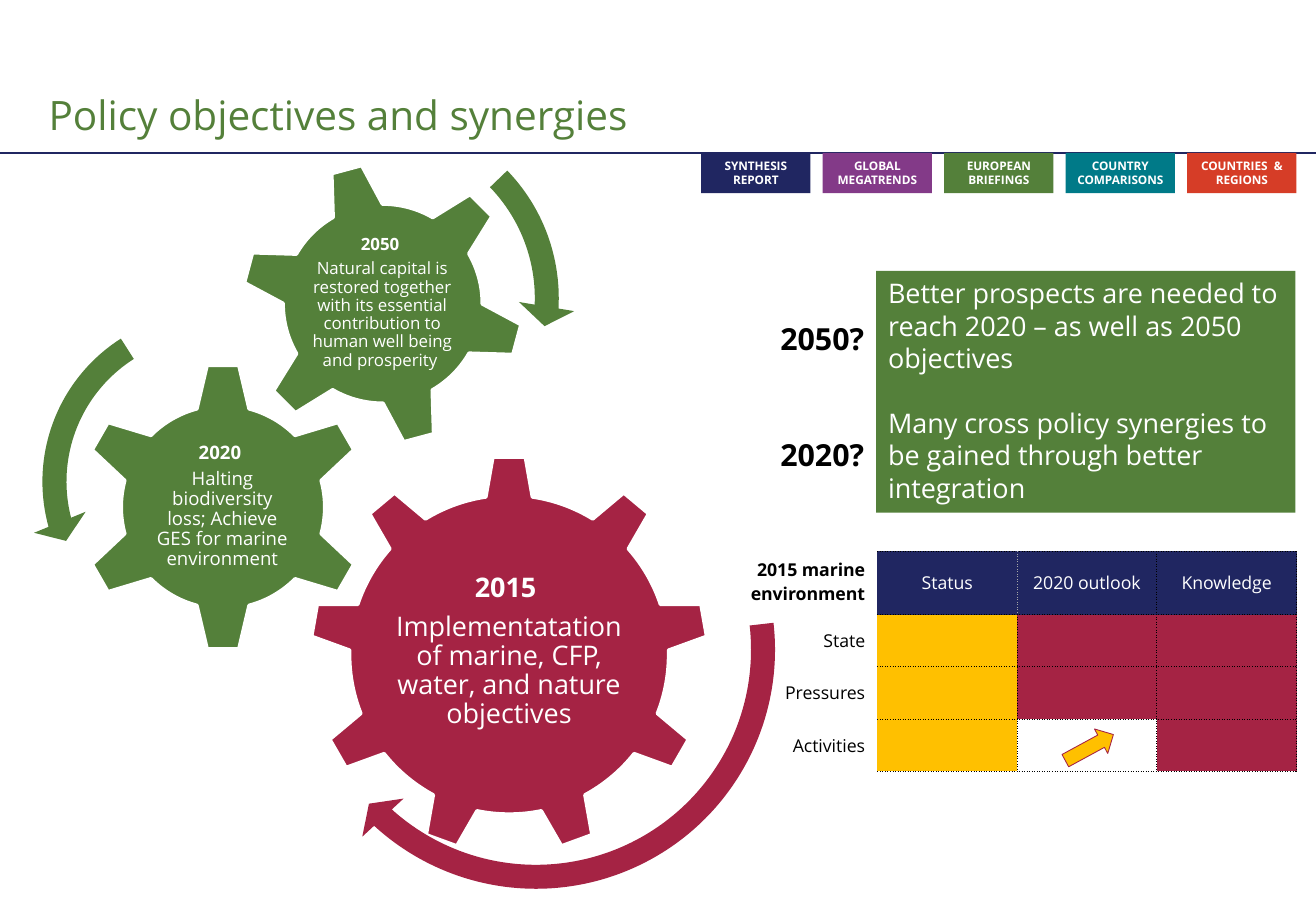
from dataclasses import dataclass

from lxml import etree
from pptx import Presentation
from pptx.dml.color import RGBColor
from pptx.enum.shapes import MSO_CONNECTOR, MSO_SHAPE
from pptx.enum.text import MSO_ANCHOR, PP_ALIGN
from pptx.oxml.ns import qn
from pptx.util import Inches, Pt

LEFT, CENTER, RIGHT = PP_ALIGN.LEFT, PP_ALIGN.CENTER, PP_ALIGN.RIGHT
TOP, MIDDLE, BOTTOM = MSO_ANCHOR.TOP, MSO_ANCHOR.MIDDLE, MSO_ANCHOR.BOTTOM
RECTANGLE, BLOCK_ARROW = MSO_SHAPE.RECTANGLE, MSO_SHAPE.RIGHT_ARROW
GEAR_6, GEAR_9 = MSO_SHAPE.GEAR_6, MSO_SHAPE.GEAR_9
CLOCKWISE, COUNTERCLOCKWISE = MSO_SHAPE.CIRCULAR_ARROW, MSO_SHAPE.LEFT_CIRCULAR_ARROW
STRAIGHT = MSO_CONNECTOR.STRAIGHT


@dataclass(frozen=True)
class Theme:
    font: str = "Open Sans"
    navy: str = "202661"
    purple: str = "833A88"
    green: str = "54803A"
    teal: str = "007A88"
    orange: str = "D63D27"
    crimson: str = "A52344"
    amber: str = "FFC000"
    grey: str = "A6A6A6"
    white: str = "FFFFFF"
    black: str = "000000"
    title_size: float = 24
    label_size: float = 18
    panel_size: float = 16
    table_size: float = 10.5
    tab_size: float = 7


THEME = Theme()

TABS = [
    ("SYNTHESIS\nREPORT", THEME.navy),
    ("GLOBAL\nMEGATRENDS", THEME.purple),
    ("EUROPEAN\nBRIEFINGS", THEME.green),
    ("COUNTRY COMPARISONS", THEME.teal),
    ("COUNTRIES  & REGIONS", THEME.orange),
]

GEARS = [
    (GEAR_9, (2.55, 3.75, 3.28, 3.28), 0, THEME.crimson, (3.21, 4.52, 1.96, 1.69), 16,
     "2015 \nImplementatation of marine, CFP, water, and nature objectives"),
    (GEAR_6, (0.64, 2.98, 2.39, 2.39), 0, THEME.green, (1.24, 3.58, 1.18, 1.18), 11,
     "2020 \nHalting biodiversity loss; Achieve GES for marine environment"),
    (GEAR_6, (1.98, 1.33, 2.34, 2.34), 345, THEME.green, (2.49, 1.84, 1.31, 1.31), 10,
     "2050 \nNatural capital is restored together with its essential "
     "contribution to human well being and prosperity "),
]

TURNS = [
    (CLOCKWISE, (2.31, 3.25, 4.2, 4.2), 90, THEME.crimson,
     (0.047, 2.99, 25.398, 158.112, 0.055)),
    (COUNTERCLOCKWISE, (0.22, 2.44, 3.05, 3.05), 350.2, THEME.green,
     (0.065, 4.3, 104.891, 148.378, 0.075)),
    (CLOCKWISE, (1.44, 0.81, 3.29, 3.29), 140.9, THEME.green,
     (0.06, 3.941, 133.138, 105.082, 0.07)),
]

HEADERS = ["\u00a02015 marine environment", "Status", "2020 outlook", "Knowledge"]
RATINGS = [
    ("State", THEME.amber, THEME.crimson, THEME.crimson),
    ("Pressures", THEME.amber, THEME.crimson, THEME.crimson),
    ("Activities", THEME.amber, THEME.white, THEME.crimson),
]


def rgb(color):
    return RGBColor.from_string(color)


def inches(box):
    return [Inches(length) for length in box]


def write_text(text_frame, text, size, color, bold=False, align=LEFT, anchor=TOP):
    text_frame.text = text
    text_frame.word_wrap = True
    text_frame.vertical_anchor = anchor
    for paragraph in text_frame.paragraphs:
        paragraph.alignment = align
        for run in paragraph.runs:
            run.font.name = THEME.font
            run.font.size = Pt(size)
            run.font.bold = bold
            run.font.color.rgb = rgb(color)


def set_insets(text_frame, inset):
    text_frame.margin_left = text_frame.margin_right = Inches(inset)
    text_frame.margin_top = text_frame.margin_bottom = Inches(inset)


def add_figure(slide, kind, box, fill, line=None, width=0, rotation=0):
    shape = slide.shapes.add_shape(kind, *inches(box))
    shape.shadow.inherit = False
    shape.rotation = rotation
    shape.fill.solid()
    shape.fill.fore_color.rgb = rgb(fill)
    if line:
        shape.line.color.rgb = rgb(line)
        shape.line.width = Pt(width)
    else:
        shape.line.fill.background()
    return shape


def add_title(slide, text):
    title = slide.shapes.title
    title.left, title.top, title.width, title.height = inches((0.3, 0.63, 9.99, 0.56))
    write_text(title.text_frame, text, THEME.title_size, THEME.green, anchor=BOTTOM)


def add_rule(slide):
    rule = slide.shapes.add_connector(STRAIGHT, *inches((0, 1.26, 10.83, 1.26)))
    rule.line.color.rgb = rgb(THEME.navy)
    rule.line.width = Pt(0.75)
    etree.SubElement(rule._element.spPr, qn("a:effectLst"))


def add_tab(slide, position, text, fill):
    tab = add_figure(slide, RECTANGLE, (5.77 + position, 1.26, 0.9, 0.33), fill)
    set_insets(tab.text_frame, 0.04)
    write_text(tab.text_frame, text, THEME.tab_size, THEME.white, True, CENTER, MIDDLE)


def add_gear(slide, kind, box, rotation, fill, text_box, size, text):
    add_figure(slide, kind, box, fill, THEME.white, 2, rotation)
    text_frame = slide.shapes.add_textbox(*inches(text_box)).text_frame
    set_insets(text_frame, 0.02)
    write_text(text_frame, text, size, THEME.white, align=CENTER, anchor=MIDDLE)
    for paragraph in text_frame.paragraphs:
        paragraph.line_spacing = 0.9
        paragraph.space_after = Pt(0.35 * size)
    text_frame.paragraphs[0].runs[0].font.bold = True


def add_turn(slide, kind, box, rotation, fill, adjustments):
    arrow = add_figure(slide, kind, box, fill, rotation=rotation)
    for index, value in enumerate(adjustments):
        arrow.adjustments[index] = value


def add_year_label(slide, text, top):
    label = slide.shapes.add_textbox(*inches((6.2, top, 1.01, 0.4)))
    write_text(label.text_frame, text, THEME.label_size, THEME.black, True, RIGHT)


def add_panel(slide, text):
    panel = add_figure(slide, RECTANGLE, (7.21, 2.23, 3.45, 1.99), THEME.green)
    write_text(panel.text_frame, text, THEME.panel_size, THEME.white)
    panel.text_frame.paragraphs[1].space_before = Pt(19.25)


def set_borders(cell, borders):
    properties = cell._tc.get_or_add_tcPr()
    for index, side in enumerate(("lnL", "lnR", "lnT", "lnB")):
        border = etree.Element(qn(f"a:{side}"))
        if side in borders:
            color, width = borders[side]
            border.set("w", str(Pt(width)))
            fill = etree.SubElement(border, qn("a:solidFill"))
            etree.SubElement(fill, qn("a:srgbClr"), val=color)
            etree.SubElement(border, qn("a:prstDash"), val="sysDot")
        else:
            etree.SubElement(border, qn("a:noFill"))
        properties.insert(index, border)


def cell_borders(row, column):
    if column == 0:
        return {}
    borders = {side: (THEME.black, 0.5) for side in ("lnL", "lnR", "lnT", "lnB")}
    if column == 1:
        del borders["lnL"]
    if row == 0 and column in (1, 2):
        borders["lnR" if column == 1 else "lnL"] = (THEME.grey, 0.25)
    return borders


def add_ratings_table(slide):
    frame = slide.shapes.add_table(4, 4, *inches((5.74, 4.54, 4.93, 1.81)))
    table = frame.table
    table.first_row = table.horz_banding = False
    for index in range(4):
        table.columns[index].width = Inches(1.15 if index else 1.48)
        table.rows[index].height = Inches(0.43 if index else 0.52)
    for row, values in enumerate([HEADERS, *RATINGS]):
        for column, value in enumerate(values):
            cell = table.cell(row, column)
            if column == 0:
                cell.fill.background()
            else:
                cell.fill.solid()
                cell.fill.fore_color.rgb = rgb(value if row else THEME.navy)
            if row == 0 or column == 0:
                write_text(cell.text_frame, value, THEME.table_size,
                           THEME.white if column else THEME.black,
                           row == column, CENTER if column else RIGHT)
            cell.vertical_anchor = TOP if row == column == 0 else MIDDLE
            set_borders(cell, cell_borders(row, column))


def main():
    presentation = Presentation()
    presentation.slide_width, presentation.slide_height = inches((10.83, 7.5))
    slide = presentation.slides.add_slide(presentation.slide_layouts[5])
    add_rule(slide)
    for position, (text, fill) in enumerate(TABS):
        add_tab(slide, position, text, fill)
    add_title(slide, "Policy objectives and synergies")
    for gear in GEARS:
        add_gear(slide, *gear)
    for turn in TURNS:
        add_turn(slide, *turn)
    add_year_label(slide, "2020?", 3.54)
    add_year_label(slide, "2050?", 2.59)
    add_ratings_table(slide)
    add_figure(slide, BLOCK_ARROW, (8.74, 6.04, 0.45, 0.23), THEME.amber,
               THEME.crimson, 0.5, 331.5)
    add_panel(slide, "Better prospects are needed to reach 2020 – as well as 2050 objectives\n"
                     "Many cross policy synergies to be gained through better integration")
    presentation.save("out.pptx")


if __name__ == "__main__":
    main()
